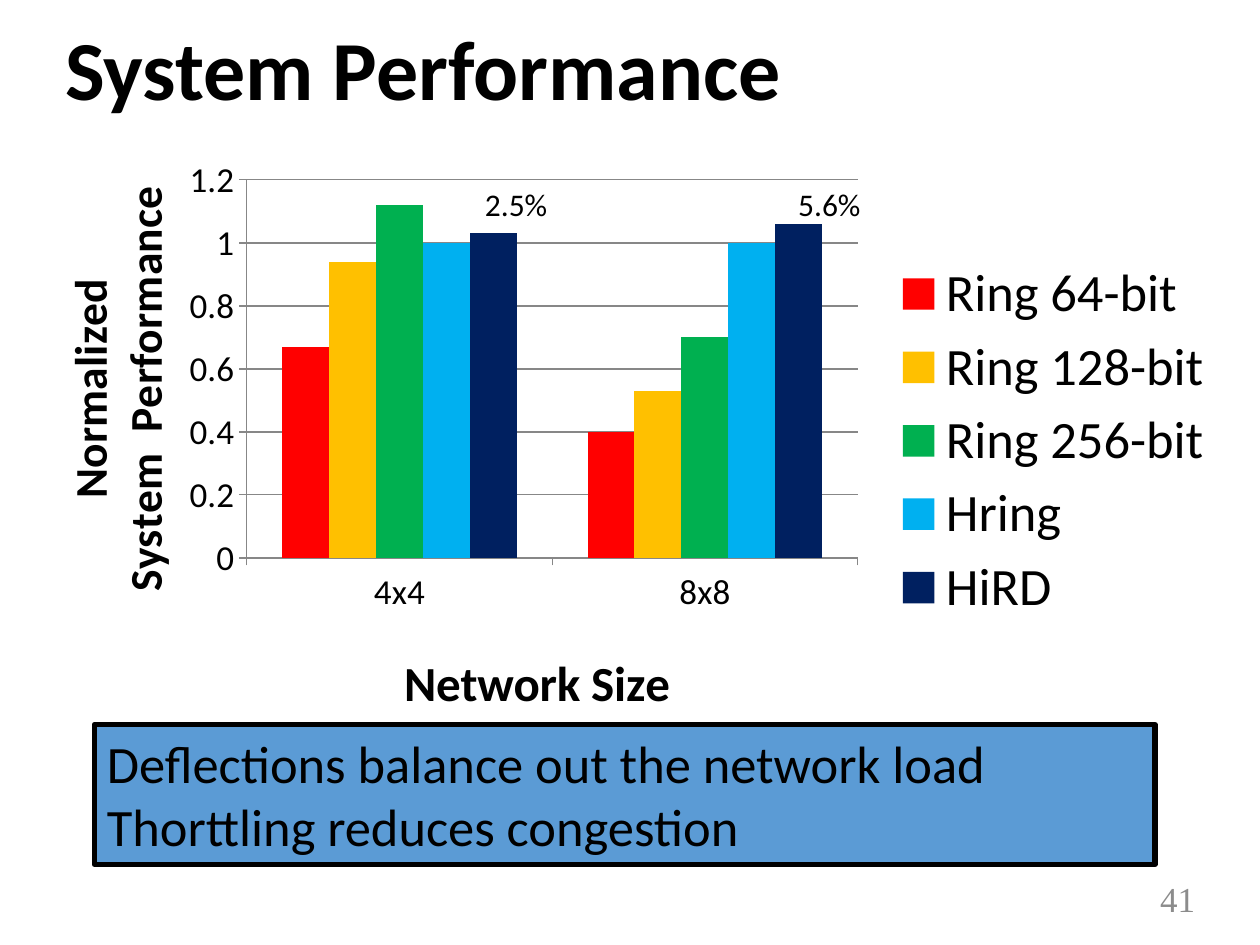
from lxml import etree
from pptx import Presentation
from pptx.chart import data as chart_data
from pptx.dml.color import RGBColor
from pptx.enum import chart as chart_enum, shapes, text
from pptx.oxml import ns
from pptx.util import Pt

BLACK = RGBColor(0x00, 0x00, 0x00)
GRAY = RGBColor(0x8C, 0x8C, 0x8C)
AXIS_GRAY = RGBColor(0x87, 0x87, 0x87)
BOX_BLUE = RGBColor(0x5B, 0x9B, 0xD5)
RED = RGBColor(0xFF, 0x00, 0x00)
AMBER = RGBColor(0xFF, 0xC0, 0x00)
GREEN = RGBColor(0x00, 0xB0, 0x50)
SKY = RGBColor(0x00, 0xB0, 0xF0)
NAVY = RGBColor(0x00, 0x20, 0x60)


def format_font(font, size, color=BLACK, name="Calibri", bold=False):
    values = {"size": Pt(size), "name": name, "bold": bold}
    for attribute, value in values.items():
        setattr(font, attribute, value)
    font.color.rgb = color


def set_layout(element, index, **values):
    for old_layout in element.findall(ns.qn("c:layout")):
        element.remove(old_layout)
    layout = etree.Element(ns.qn("c:layout"))
    manual = etree.SubElement(layout, ns.qn("c:manualLayout"))
    for tag, value in values.items():
        etree.SubElement(manual, ns.qn(f"c:{tag}")).set("val", str(value))
    element.insert(index, layout)


presentation = Presentation()
presentation.slide_width = Pt(720)
presentation.slide_height = Pt(540)
slide = presentation.slides.add_slide(presentation.slide_layouts[5])

title = slide.shapes.title
for attribute, value in {"left": 30, "top": 12, "width": 690, "height": 60}.items():
    setattr(title, attribute, Pt(value))
title.text_frame.text = "System Performance"
title.text_frame.vertical_anchor = text.MSO_ANCHOR.MIDDLE
paragraph = title.text_frame.paragraphs[0]
paragraph.alignment = text.PP_ALIGN.LEFT
paragraph.line_spacing = 0.9
format_font(paragraph.runs[0].font, 48, bold=True)

series_rows = [
    ("Ring 64-bit", (0.67, 0.4), RED),
    ("Ring 128-bit", (0.94, 0.53), AMBER),
    ("Ring 256-bit", (1.12, 0.7), GREEN),
    ("Hring", (1, 1), SKY),
    ("HiRD", (1.03, 1.06), NAVY),
]
performance = chart_data.CategoryChartData()
performance.categories = ["4x4", "8x8"]
for name, values, color in series_rows:
    performance.add_series(name, values)
chart = slide.shapes.add_chart(
    chart_enum.XL_CHART_TYPE.COLUMN_CLUSTERED,
    Pt(12), Pt(84), Pt(690), Pt(336), performance,
).chart
format_font(chart.font, 10)
chart.has_title = False
plot = chart.plots[0]
plot.gap_width = 150
plot.overlap = 0
plot.vary_by_categories = False
for series, (name, values, color) in zip(plot.series, series_rows):
    series.format.fill.solid()
    series.format.fill.fore_color.rgb = color

axis_rows = [
    (chart.category_axis, "Network Size", 28, 0.31, 0.84),
    (chart.value_axis, "Normalized\nSystem  Performance", 26, 0.03, 0.06),
]
for axis, label, size, x, y in axis_rows:
    axis.major_tick_mark = chart_enum.XL_TICK_MARK.OUTSIDE
    axis.format.line.color.rgb = AXIS_GRAY
    axis.format.line.width = Pt(0.75)
    format_font(axis.tick_labels.font, 20)
    frame = axis.axis_title.text_frame
    frame.text = label
    for paragraph in frame.paragraphs:
        format_font(paragraph.runs[0].font, size, bold=True)
    set_layout(axis.axis_title._element, 1, xMode="edge", yMode="edge", x=x, y=y)

value_axis = chart.value_axis
value_axis.minimum_scale, value_axis.maximum_scale, value_axis.major_unit = 0, 1.2, 0.2
value_axis.has_major_gridlines = True
value_axis.major_gridlines.format.line.color.rgb = AXIS_GRAY
value_axis.major_gridlines.format.line.width = Pt(0.75)

chart.has_legend = True
chart.legend.position = chart_enum.XL_LEGEND_POSITION.RIGHT
chart.legend.include_in_layout = False
format_font(chart.legend.font, 30)
set_layout(chart.legend._element, 1, xMode="edge", yMode="edge",
           x=0.72, y=0.18, w=0.27, h=0.64)
plot_area = chart._chartSpace.find(".//" + ns.qn("c:plotArea"))
set_layout(plot_area, 0, layoutTarget="inner", xMode="edge", yMode="edge",
           x=0.187, y=0.056, w=0.506, h=0.643)

text_rows = [
    ("5.6%", 449, 102, 50, 29, 18, BLACK, "Calibri", text.PP_ALIGN.LEFT),
    ("2.5%", 270, 102, 50, 29, 18, BLACK, "Calibri", text.PP_ALIGN.LEFT),
    ("41", 636, 499, 54, 29, 20, GRAY, "Times New Roman", text.PP_ALIGN.RIGHT),
]
for words, left, top, width, height, size, color, name, alignment in text_rows:
    label = slide.shapes.add_textbox(Pt(left), Pt(top), Pt(width), Pt(height))
    label.text_frame.text = words
    label.text_frame.vertical_anchor = text.MSO_ANCHOR.MIDDLE
    paragraph = label.text_frame.paragraphs[0]
    paragraph.alignment = alignment
    format_font(paragraph.runs[0].font, size, color, name)

takeaway = slide.shapes.add_shape(
    shapes.MSO_SHAPE.RECTANGLE, Pt(54), Pt(414), Pt(606), Pt(80))
takeaway.shadow.inherit = False
takeaway.fill.solid()
takeaway.fill.fore_color.rgb = BOX_BLUE
takeaway.line.color.rgb = BLACK
takeaway.line.width = Pt(3)
frame = takeaway.text_frame
frame.text = "Deflections balance out the network load Thorttling reduces congestion"
frame.word_wrap = True
frame.vertical_anchor = text.MSO_ANCHOR.TOP
frame.paragraphs[0].alignment = text.PP_ALIGN.LEFT
format_font(frame.paragraphs[0].runs[0].font, 30)

presentation.save("out.pptx")
